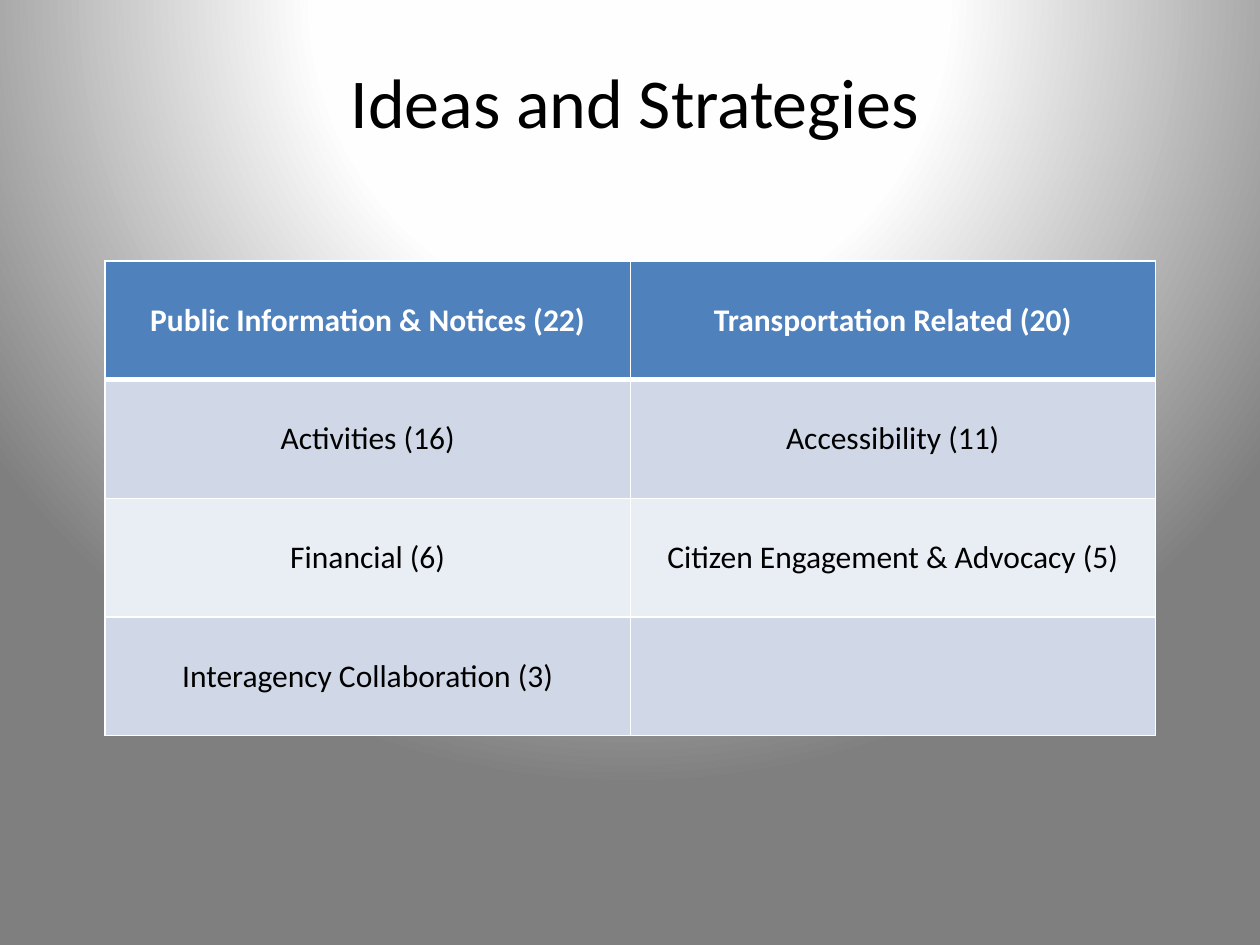
from lxml import etree
from pptx import Presentation
from pptx import util as u
from pptx.dml.color import RGBColor
from pptx.enum import text
from pptx.oxml import parse_xml
from pptx.oxml.ns import nsdecls, qn

BLACK = RGBColor(0x00, 0x00, 0x00)
WHITE = RGBColor(0xFF, 0xFF, 0xFF)
NEAR_WHITE = RGBColor(0xFE, 0xFE, 0xFE)
GREY = RGBColor(0x7F, 0x7F, 0x7F)
HEADER_BLUE = RGBColor(0x4F, 0x81, 0xBD)
BAND_DARK = RGBColor(0xD0, 0xD8, 0xE8)
BAND_LIGHT = RGBColor(0xE9, 0xED, 0xF4)

IDEAS = [
    ("Public Information & Notices (22)", "Transportation Related (20)"),
    ("Activities (16)", "Accessibility (11)"),
    ("Financial (6)", "Citizen Engagement & Advocacy (5)"),
    ("Interagency Collaboration (3)", ""),
]


class SlideBuilder:
    font_name = "Calibri"
    title_size = 40
    cell_size = 18
    thin, thick = 1, 3

    def __init__(self, deck):
        self.slide = deck.slides.add_slide(deck.slide_layouts[5])

    def background(self, stops):
        """Fill the background with a round gradient centred above the slide."""
        stop_xml = "".join(
            f'<a:gs pos="{percent * 1000}"><a:srgbClr val="{color}"/></a:gs>'
            for percent, color in stops)
        self.slide.element.cSld.insert(0, parse_xml(
            f'<p:bg {nsdecls("p", "a")}><p:bgPr><a:gradFill rotWithShape="1">'
            f'<a:gsLst>{stop_xml}</a:gsLst><a:path path="circle">'
            '<a:fillToRect l="50000" t="-80000" r="50000" b="180000"/>'
            '</a:path></a:gradFill><a:effectLst/></p:bgPr></p:bg>'))

    def format_text(self, frame, size, color, bold=False):
        for para in frame.paragraphs:
            para.alignment = text.PP_ALIGN.CENTER
            para.font.size = u.Pt(size)
            for span in para.runs:
                span.font.name = self.font_name
                span.font.size = u.Pt(size)
                span.font.bold = bold
                span.font.color.rgb = color

    def title(self, wording, left, top, width, height):
        box = self.slide.shapes.title
        box.left, box.top, box.width, box.height = map(
            u.Cm, (left, top, width, height))
        frame = box.text_frame
        frame.text = wording
        frame.vertical_anchor = text.MSO_ANCHOR.MIDDLE
        self.format_text(frame, self.title_size, BLACK)

    def border(self, cell, side, points):
        line = etree.SubElement(cell._tc.get_or_add_tcPr(), qn(f"a:ln{side}"),
                                w=str(u.Pt(points)))
        fill = etree.SubElement(line, qn("a:solidFill"))
        etree.SubElement(fill, qn("a:srgbClr"), val=str(WHITE))

    def table(self, rows, left, top, width, height):
        table = self.slide.shapes.add_table(
            len(rows), len(rows[0]),
            *map(u.Cm, (left, top, width, height))).table
        for row_index, row in enumerate(rows):
            is_header = row_index == 0
            if is_header:
                color = HEADER_BLUE
            else:
                color = BAND_DARK if row_index % 2 else BAND_LIGHT
            for column_index, wording in enumerate(row):
                cell = table.cell(row_index, column_index)
                cell.text_frame.text = wording
                cell.vertical_anchor = text.MSO_ANCHOR.MIDDLE
                self.format_text(cell.text_frame, self.cell_size,
                                 WHITE if is_header else BLACK, is_header)
                self.border(cell, "L", self.thin)
                self.border(cell, "R", self.thin)
                self.border(cell, "T", self.thick if row_index == 1 else self.thin)
                self.border(cell, "B", self.thick if is_header else self.thin)
                cell.fill.solid()
                cell.fill.fore_color.rgb = color


def main():
    deck = Presentation()
    deck.slide_width, deck.slide_height = u.Cm(25.4), u.Cm(19.05)
    page = SlideBuilder(deck)
    page.background([(0, WHITE), (40, NEAR_WHITE), (100, GREY)])
    page.title("Ideas and Strategies", 1.37, 0.43, 22.86, 3.18)
    page.table(IDEAS, 2.12, 5.26, 21.17, 9.57)
    deck.save("out.pptx")


if __name__ == "__main__":
    main()
